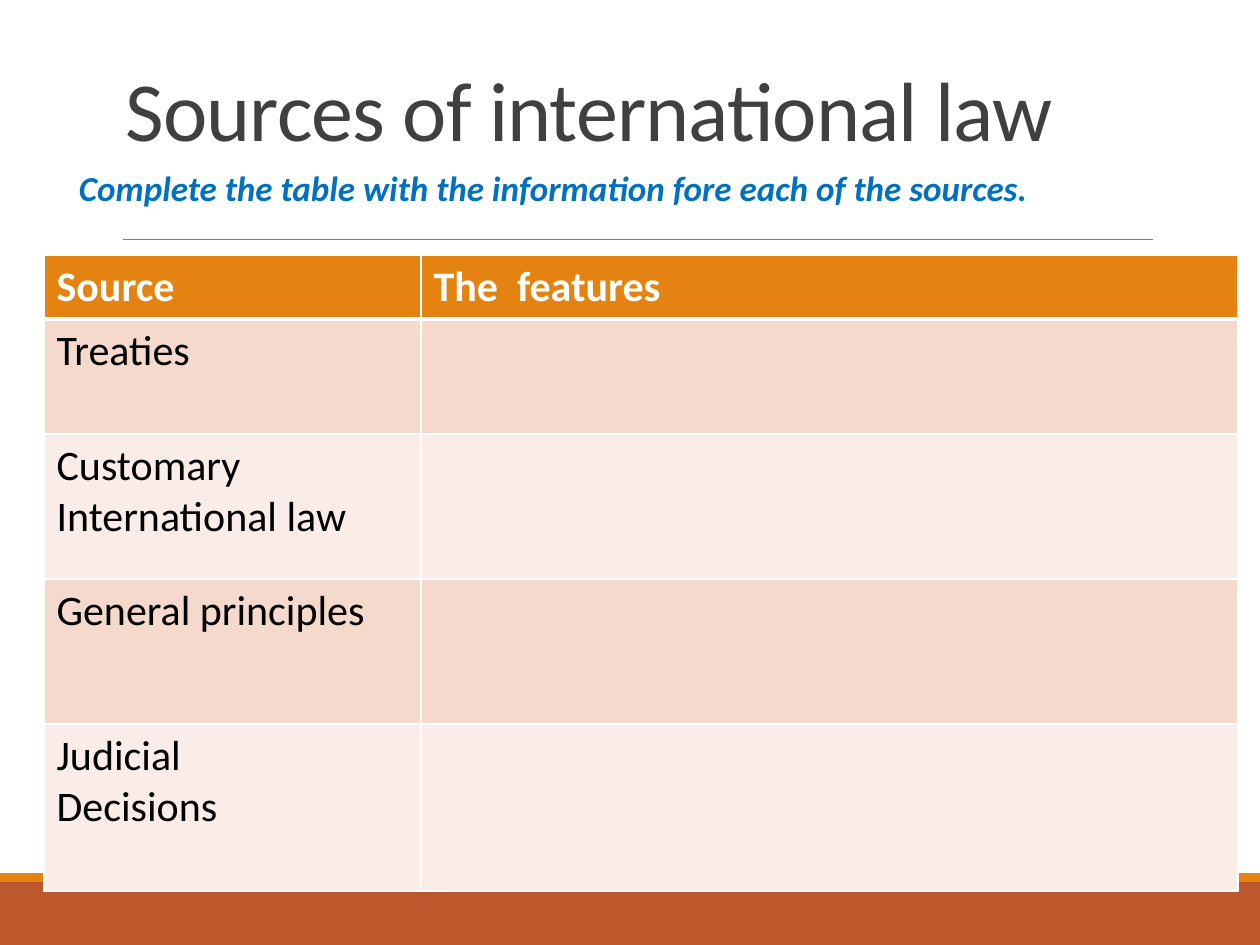
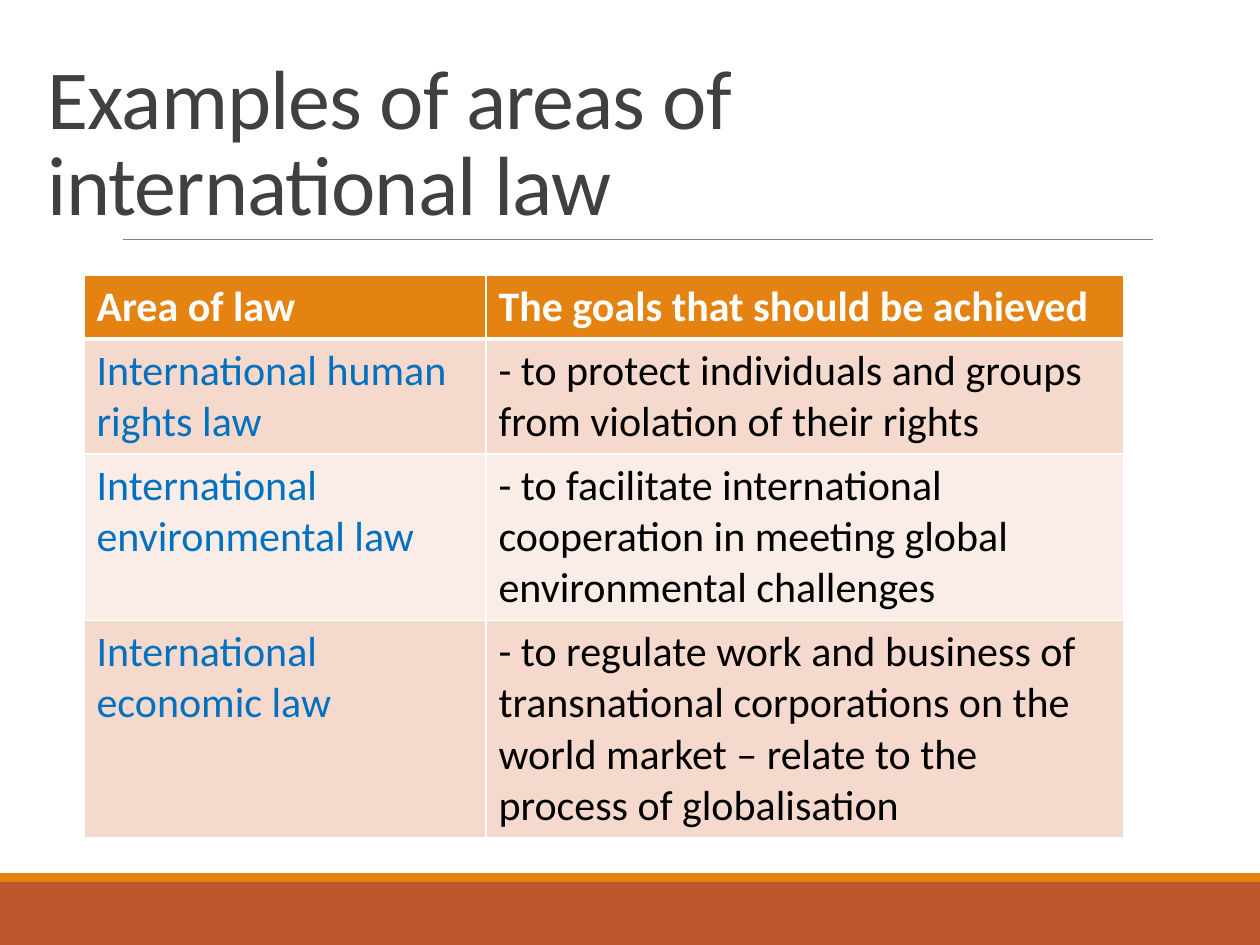
from dataclasses import dataclass
from typing import NamedTuple

from lxml.etree import SubElement
from pptx import Presentation
from pptx.dml.color import RGBColor
from pptx.enum.shapes import MSO_CONNECTOR, MSO_SHAPE
from pptx.enum.text import MSO_ANCHOR, MSO_AUTO_SIZE, PP_ALIGN
from pptx.oxml import parse_xml
from pptx.oxml.ns import nsdecls, qn
from pptx.slide import Slide
from pptx.table import _Cell
from pptx.text.text import TextFrame
from pptx.util import Emu, Pt

RECT = MSO_SHAPE.RECTANGLE
STRAIGHT = MSO_CONNECTOR.STRAIGHT
TOP, BOTTOM = MSO_ANCHOR.TOP, MSO_ANCHOR.BOTTOM
NO_FIT = MSO_AUTO_SIZE.NONE
LEFT = PP_ALIGN.LEFT
SCALE = 914400 / 126
TITLE_ONLY = 5


@dataclass(frozen=True)
class Theme:
    font: str = "Calibri"
    rust: str = "BD582C"
    orange: str = "E48312"
    gray: str = "808080"
    dark: str = "404040"
    blue: str = "0070C0"
    black: str = "000000"
    white: str = "FFFFFF"
    rows: tuple[str, str] = ("F5D9CC", "FAEDE7")
    title: int = 48
    hint: int = 20
    cell: int = 24
    rule: float = 0.5
    thin: int = 1
    thick: int = 3


class Box(NamedTuple):
    left: int
    top: int
    width: int
    height: int


class Band(NamedTuple):
    box: Box
    color: str


class Grid(NamedTuple):
    left: int
    top: int
    cols: tuple[int, ...]
    rows: tuple[int, ...]
    cells: tuple[tuple[str, ...], ...]
    inks: tuple[str, ...]


THEME = Theme()
BANDS = (
    Band(Box(0, 882, 1260, 63), THEME.rust),
    Band(Box(0, 873, 1260, 9), THEME.orange),
)
RULE = Box(123, 239, 1030, 0)

SOURCES = Grid(
    44, 255, (377, 817), (63, 115, 145, 145, 167),
    (
        ("Source", "The  features"),
        ("Treaties", ""),
        ("Customary\nInternational law", ""),
        ("General principles", ""),
        ("Judicial\nDecisions", ""),
    ),
    (THEME.black, THEME.black),
)
AREAS = Grid(
    84, 275, (402, 638), (63, 115, 166, 217),
    (
        ("Area of law", "The goals that should be achieved"),
        ("International human rights law",
         "- to protect individuals and groups from violation of their rights"),
        ("International environmental law",
         "- to facilitate international cooperation in meeting global "
         "environmental challenges"),
        ("International economic law",
         "- to regulate work and business of transnational corporations on "
         "the world market – relate to the process of globalisation"),
    ),
    (THEME.blue, THEME.black),
)


def px(count: int) -> Emu:
    return Emu(round(count * SCALE))


def place(box: Box) -> tuple[Emu, ...]:
    return tuple(px(side) for side in box)


def write(frame: TextFrame, text: str, *, size: int, color: str,
          bold: bool = False, slant: bool = False, line: float = 1.0,
          track: int = 0) -> None:
    frame.word_wrap = True
    for index, words in enumerate(text.split("\n")):
        para = frame.add_paragraph() if index else frame.paragraphs[0]
        para.alignment = LEFT
        para.line_spacing = line
        run = para.add_run()
        run.text = words
        font = run.font
        font.name = THEME.font
        font.size = Pt(size)
        font.bold = bold
        font.italic = slant
        font.color.rgb = RGBColor.from_string(color)
        if track:
            run._r.get_or_add_rPr().set("spc", str(track))


def add_band(slide: Slide, band: Band) -> None:
    shape = slide.shapes.add_shape(RECT, *place(band.box))
    shape.shadow.inherit = False
    shape.fill.solid()
    shape.fill.fore_color.rgb = RGBColor.from_string(band.color)
    shape.line.fill.background()


def add_rule(slide: Slide) -> None:
    left, top, width, _ = place(RULE)
    rule = slide.shapes.add_connector(STRAIGHT, left, top, left + width, top)
    rule.line.color.rgb = RGBColor.from_string(THEME.gray)
    rule.line.width = Pt(THEME.rule)
    SubElement(rule._element.spPr, qn("a:effectLst"))


def add_page(deck: Presentation, text: str, box: Box) -> Slide:
    slide = deck.slides.add_slide(deck.slide_layouts[TITLE_ONLY])
    for band in BANDS:
        add_band(slide, band)
    add_rule(slide)
    title = slide.shapes.title
    title.left, title.top, title.width, title.height = place(box)
    frame = title.text_frame
    frame.auto_size = NO_FIT
    frame.vertical_anchor = BOTTOM
    write(frame, text, size=THEME.title, color=THEME.dark, line=0.85, track=-50)
    return slide


def add_hint(slide: Slide, text: str, box: Box) -> None:
    frame = slide.shapes.add_textbox(*place(box)).text_frame
    frame.auto_size = NO_FIT
    frame.vertical_anchor = TOP
    frame.margin_left, frame.margin_right = px(12), 0
    write(frame, text, size=THEME.hint, color=THEME.blue, bold=True,
          slant=True, line=0.9)


def edge(cell: _Cell, top: int, base: int) -> None:
    props = cell._tc.get_or_add_tcPr()
    sides = {"lnL": THEME.thin, "lnR": THEME.thin, "lnT": top, "lnB": base}
    for index, (side, width) in enumerate(sides.items()):
        props.insert(index, parse_xml(
            f'<a:{side} {nsdecls("a")} w="{Pt(width)}"><a:solidFill>'
            f'<a:srgbClr val="{THEME.white}"/></a:solidFill></a:{side}>'))


def add_grid(slide: Slide, grid: Grid) -> None:
    box = Box(grid.left, grid.top, sum(grid.cols), sum(grid.rows))
    table = slide.shapes.add_table(
        len(grid.rows), len(grid.cols), *place(box)).table
    table.horz_banding = False
    table.first_row = False
    for column, width in zip(table.columns, grid.cols):
        column.width = px(width)
    for index, height in enumerate(grid.rows):
        table.rows[index].height = px(height)
        head = index == 0
        fill = THEME.orange if head else THEME.rows[(index - 1) % 2]
        top = THEME.thick if index == 1 else THEME.thin
        base = THEME.thick if head else THEME.thin
        for spot, text in enumerate(grid.cells[index]):
            cell = table.cell(index, spot)
            cell.fill.solid()
            cell.fill.fore_color.rgb = RGBColor.from_string(fill)
            edge(cell, top, base)
            if text:
                ink = THEME.white if head else grid.inks[spot]
                write(cell.text_frame, text, size=THEME.cell, color=ink,
                      bold=head)


def main() -> None:
    deck = Presentation()
    deck.slide_width, deck.slide_height = px(1260), px(945)
    page = add_page(deck, "Sources of international law",
                    Box(113, 39, 1040, 126))
    add_hint(page,
             "Complete the table with the information fore each of the sources.",
             Box(67, 165, 1134, 677))
    add_grid(page, SOURCES)
    page = add_page(deck, "Examples of areas of international law",
                    Box(35, 39, 932, 200))
    add_grid(page, AREAS)
    deck.save("out.pptx")


if __name__ == "__main__":
    main()
